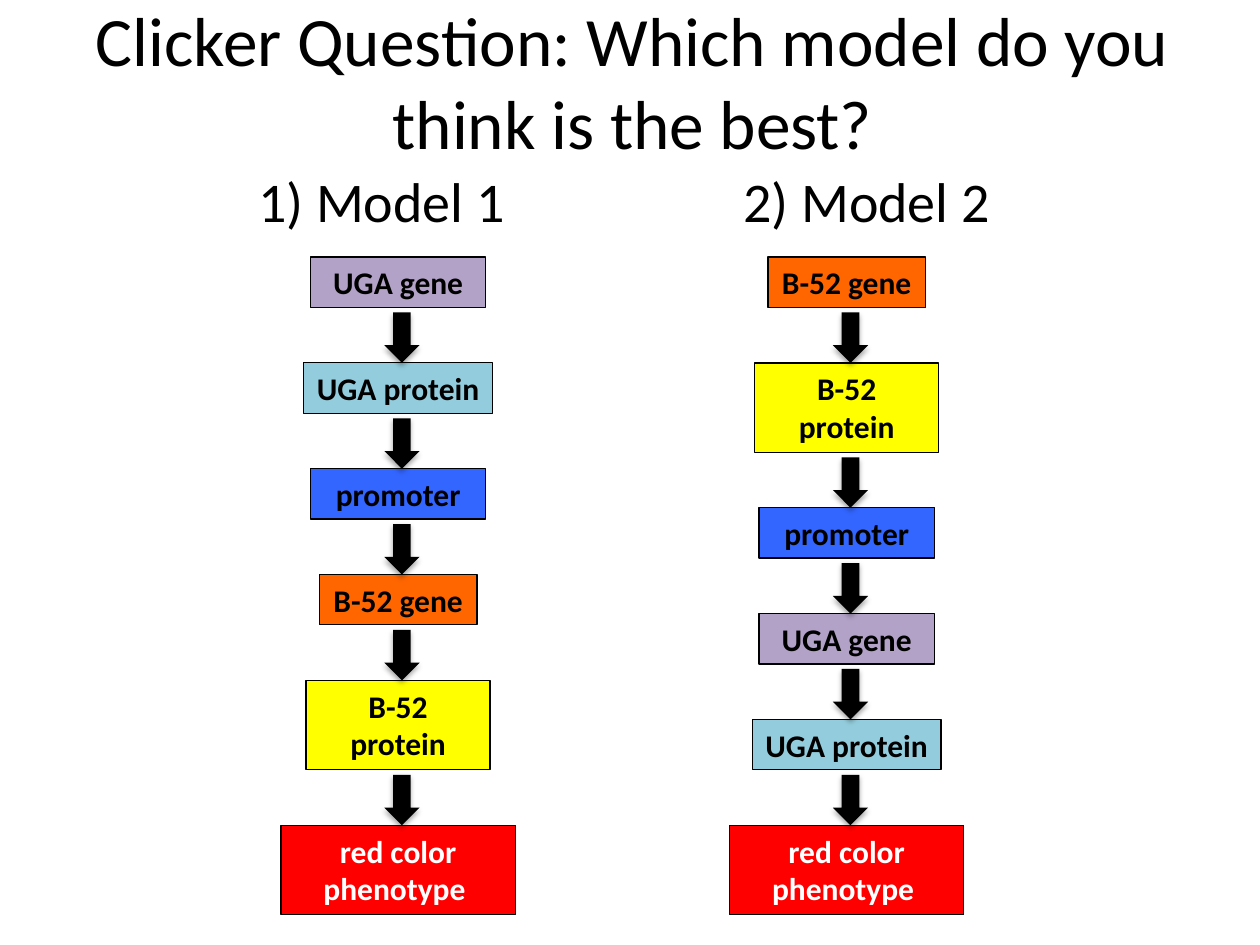
from dataclasses import dataclass

from lxml.etree import SubElement
from pptx import Presentation
from pptx.dml.color import RGBColor
from pptx.enum.shapes import MSO_SHAPE
from pptx.enum.text import MSO_ANCHOR, MSO_AUTO_SIZE, PP_ALIGN
from pptx.oxml.ns import qn
from pptx.slide import Slide
from pptx.text.text import TextFrame
from pptx.util import Inches, Pt

BLACK = RGBColor(0x00, 0x00, 0x00)
WHITE = RGBColor(0xFF, 0xFF, 0xFF)
ORANGE = RGBColor(0xFF, 0x66, 0x00)
YELLOW = RGBColor(0xFF, 0xFF, 0x00)
PURPLE = RGBColor(0xB3, 0xA2, 0xC7)
TEAL = RGBColor(0x93, 0xCD, 0xDD)
RED = RGBColor(0xFF, 0x00, 0x00)
BLUE = RGBColor(0x33, 0x66, 0xFF)

FONT = "Calibri"
TOP = 2.04
GAP = 0.44
ARROW_WIDTH = 0.28
ARROW_HEIGHT = 0.4
ARROW_OFFSET = 0.03


@dataclass(frozen=True)
class Step:
    text: str
    width: float
    height: float
    fill: RGBColor
    color: RGBColor = BLACK
    wrap: bool = True


@dataclass(frozen=True)
class Model:
    heading: str
    heading_left: float
    center: float
    steps: tuple[Step, ...]


UGA_GENE = Step("UGA gene", 1.39, 0.4, PURPLE)
UGA_PROTEIN = Step("UGA protein", 1.5, 0.4, TEAL, wrap=False)
PROMOTER = Step("promoter", 1.39, 0.4, BLUE)
B52_GENE = Step("B-52 gene", 1.25, 0.4, ORANGE)
B52_PROTEIN = Step("B-52 protein", 1.46, 0.71, YELLOW)
PHENOTYPE = Step("red color phenotype ", 1.86, 0.71, RED, WHITE)

MODELS = (
    Model("1) Model 1", 1.95, 3.16,
          (UGA_GENE, UGA_PROTEIN, PROMOTER, B52_GENE, B52_PROTEIN, PHENOTYPE)),
    Model("2) Model 2", 5.8, 6.72,
          (B52_GENE, B52_PROTEIN, PROMOTER, UGA_GENE, UGA_PROTEIN, PHENOTYPE)),
)


def write(tf: TextFrame, text: str, size: float, color: RGBColor,
          align: PP_ALIGN, bold: bool = False) -> None:
    tf.text = text
    p = tf.paragraphs[0]
    p.alignment = align
    font = p.runs[0].font
    font.name = FONT
    font.size = Pt(size)
    font.bold = bold
    font.color.rgb = color


def add_title(s: Slide, text: str) -> None:
    sp = s.shapes.title
    sp.left, sp.top = Inches(0.52), Inches(0.01)
    sp.width, sp.height = Inches(9), Inches(1.25)
    tf = sp.text_frame
    write(tf, text, 39.6, BLACK, PP_ALIGN.CENTER)
    tf.auto_size = MSO_AUTO_SIZE.NONE
    tf.vertical_anchor = MSO_ANCHOR.MIDDLE


def add_heading(s: Slide, text: str, left: float) -> None:
    sp = s.shapes.add_textbox(Inches(left), Inches(1.27), Inches(2.18), Inches(0.64))
    tf = sp.text_frame
    write(tf, text, 32, BLACK, PP_ALIGN.LEFT)
    tf.word_wrap = False
    tf.auto_size = MSO_AUTO_SIZE.SHAPE_TO_FIT_TEXT


def add_step(s: Slide, step: Step, center: float, top: float) -> None:
    sp = s.shapes.add_shape(MSO_SHAPE.RECTANGLE, Inches(center - step.width / 2),
                            Inches(top), Inches(step.width), Inches(step.height))
    sp.fill.solid()
    sp.fill.fore_color.rgb = step.fill
    sp.line.color.rgb = BLACK
    sp.line.width = Pt(0.75)
    sp.shadow.inherit = False
    tf = sp.text_frame
    write(tf, step.text, 18, step.color, PP_ALIGN.CENTER, bold=True)
    tf.word_wrap = step.wrap
    tf.auto_size = MSO_AUTO_SIZE.SHAPE_TO_FIT_TEXT
    tf.vertical_anchor = MSO_ANCHOR.TOP


def add_arrow(s: Slide, center: float, bottom: float) -> None:
    sp = s.shapes.add_shape(MSO_SHAPE.DOWN_ARROW, Inches(center - ARROW_WIDTH / 2),
                            Inches(bottom - ARROW_HEIGHT), Inches(ARROW_WIDTH),
                            Inches(ARROW_HEIGHT))
    sp.fill.solid()
    sp.fill.fore_color.rgb = BLACK
    sp.line.fill.background()
    sp.shadow.inherit = False
    effects = sp._element.spPr.find(qn("a:effectLst"))
    shadow = SubElement(effects, qn("a:outerShdw"), blurRad=str(Pt(3.1)),
                        dist=str(Pt(1.8)), dir="5400000", rotWithShape="0")
    color = SubElement(shadow, qn("a:srgbClr"), val=str(BLACK))
    SubElement(color, qn("a:alpha"), val="35000")


def add_model(s: Slide, model: Model) -> None:
    add_heading(s, model.heading, model.heading_left)
    top = TOP
    for i, step in enumerate(model.steps):
        add_step(s, step, model.center, top)
        if i:
            add_arrow(s, model.center + ARROW_OFFSET, top)
        top += step.height + GAP


def main() -> None:
    prs = Presentation()
    prs.slide_width, prs.slide_height = Inches(10), Inches(7.5)
    s = prs.slides.add_slide(prs.slide_layouts[5])
    add_title(s, "Clicker Question: Which model do you think is the best?")
    for model in MODELS:
        add_model(s, model)
    prs.save("out.pptx")


if __name__ == "__main__":
    main()
